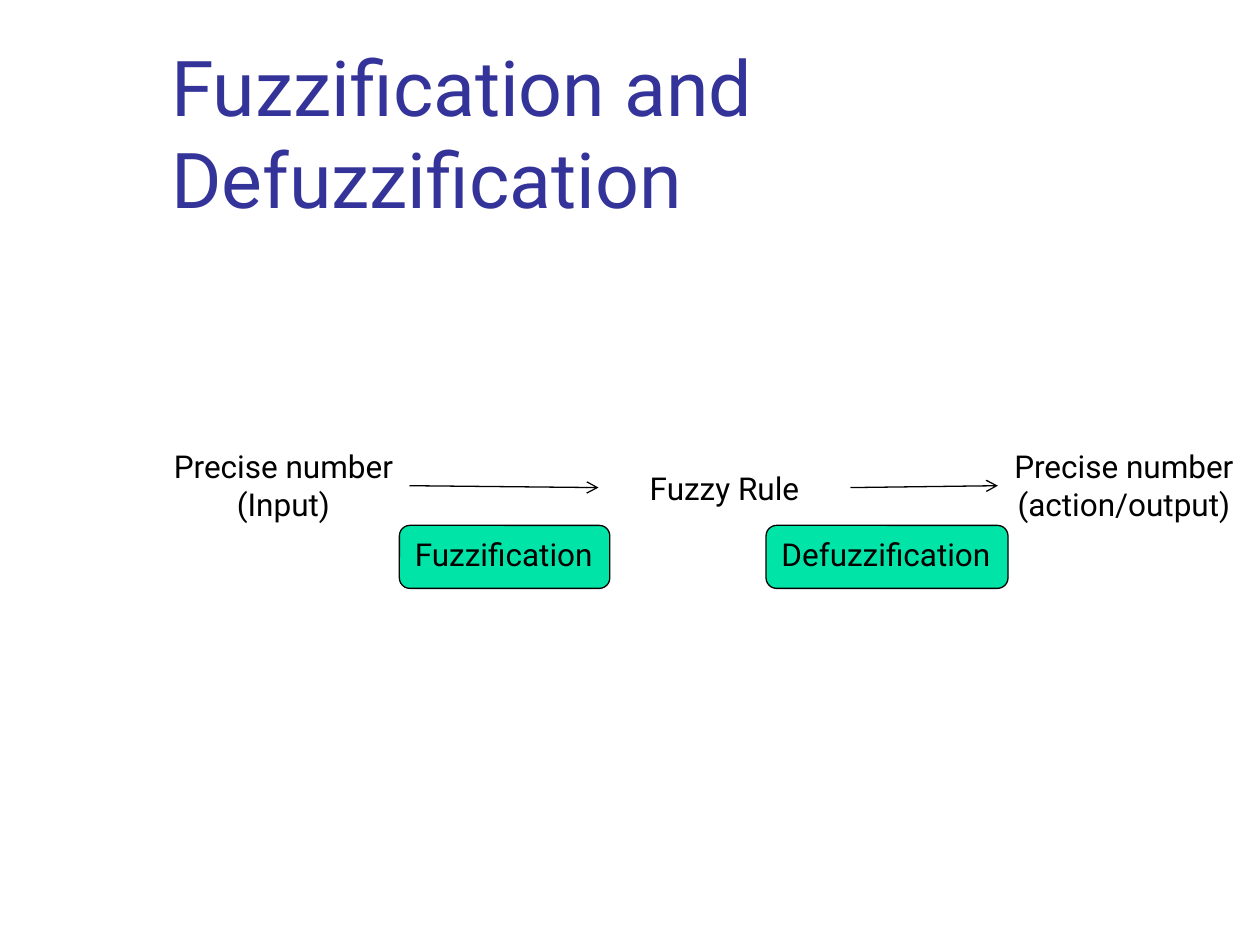
from lxml import etree
from pptx import Presentation
from pptx import util as u
from pptx.dml.color import RGBColor
from pptx.enum import shapes, text
from pptx.oxml.ns import qn

BLUE = RGBColor(0x33, 0x33, 0x99)
GREEN = RGBColor(0x00, 0xE4, 0xA8)
BLACK = RGBColor(0x00, 0x00, 0x00)


def write(shape, wording, size=18, color=BLACK, align=text.PP_ALIGN.LEFT,
          anchor=text.MSO_ANCHOR.TOP):
    frame = shape.text_frame
    frame.word_wrap = True
    frame.vertical_anchor = anchor
    paragraph = frame.paragraphs[0]
    paragraph.text = wording
    paragraph.alignment = align
    paragraph.font.name = "Roboto"
    paragraph.font.size = u.Pt(size)
    paragraph.font.color.rgb = color


presentation = Presentation()
presentation.slide_width = u.Inches(10)
presentation.slide_height = u.Inches(7.5)
slide = presentation.slides.add_slide(presentation.slide_layouts[6])

# Title
title = slide.shapes.add_textbox(u.Inches(1.26), u.Inches(0.23), u.Inches(8.52), u.Inches(1.6))
write(title, "Fuzzification and Defuzzification", 44, BLUE, anchor=text.MSO_ANCHOR.BOTTOM)

# Stages from input to output
stages = []
for left, top, height, wording in [
    (1.25, 3.5, 0.71, "Precise number\v(Input)"),
    (4.75, 3.67, 0.4, "Fuzzy Rule"),
    (7.92, 3.5, 0.71, "Precise number\v(action/output)"),
]:
    stage = slide.shapes.add_textbox(u.Inches(left), u.Inches(top), u.Inches(2), u.Inches(height))
    write(stage, wording, align=text.PP_ALIGN.CENTER)
    stage.text_frame.auto_size = text.MSO_AUTO_SIZE.SHAPE_TO_FIT_TEXT
    stages.append(stage)

# Arrows joining neighbouring stages
for source, target in zip(stages, stages[1:]):
    arrow = slide.shapes.add_connector(shapes.MSO_CONNECTOR.STRAIGHT, 0, 0, 0, 0)
    arrow.begin_connect(source, 3)
    arrow.end_connect(target, 1)
    arrow.line.color.rgb = BLACK
    arrow.line.width = u.Pt(0.75)
    etree.SubElement(arrow.line._get_or_add_ln(), qn("a:tailEnd"), type="arrow")
    etree.SubElement(arrow._element.spPr, qn("a:effectLst"))

# Conversion steps below the arrows
for left, width, wording in [(3.17, 1.67, "Fuzzification"), (6.08, 1.92, "Defuzzification")]:
    step = slide.shapes.add_shape(shapes.MSO_SHAPE.ROUNDED_RECTANGLE, u.Inches(left),
                                  u.Inches(4.17), u.Inches(width), u.Inches(0.5))
    step.shadow.inherit = False
    step.fill.solid()
    step.fill.fore_color.rgb = GREEN
    step.line.color.rgb = BLACK
    step.line.width = u.Pt(0.75)
    write(step, wording)
    step.text_frame.word_wrap = False

presentation.save("out.pptx")
